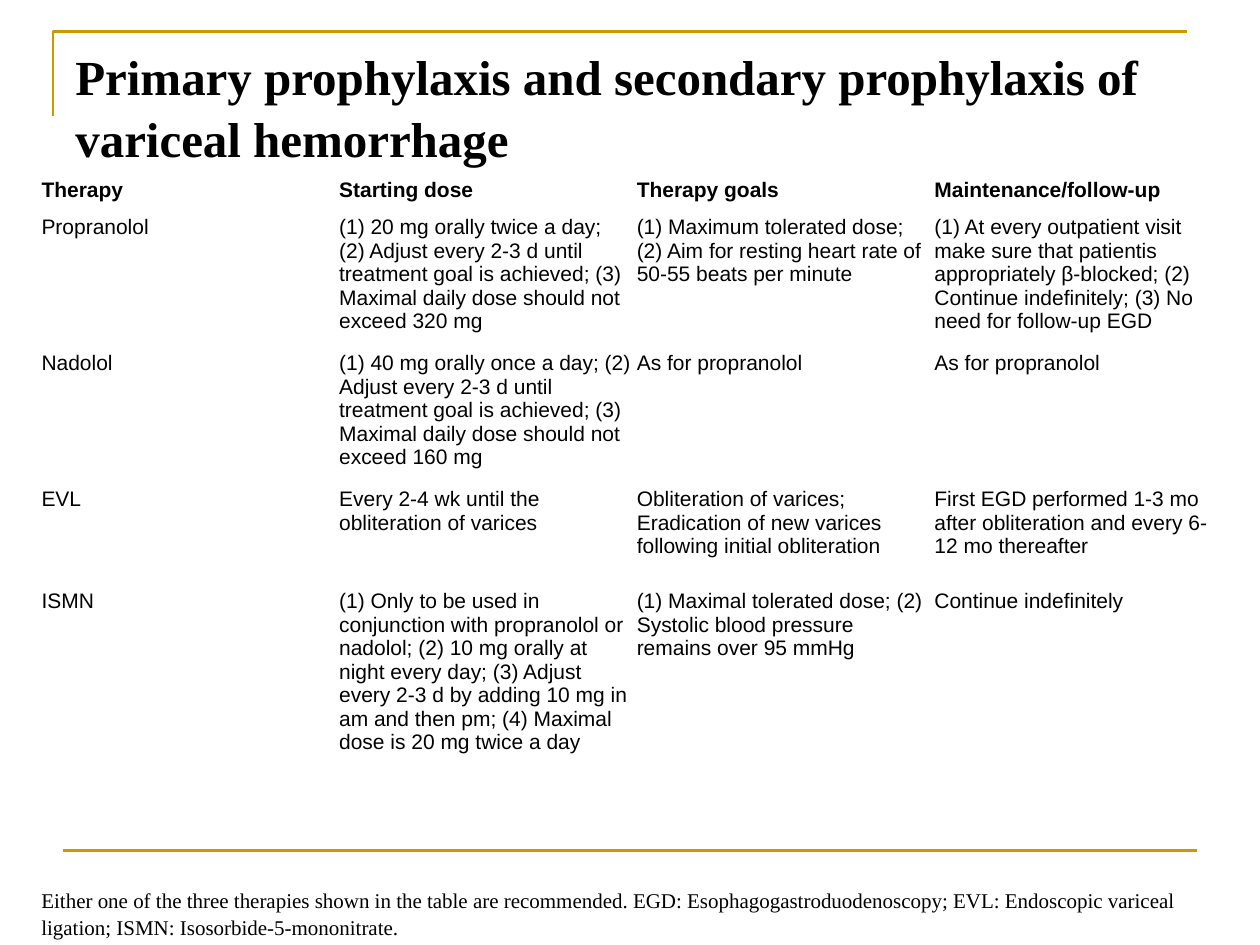
from dataclasses import dataclass

from lxml.etree import SubElement
from pptx import Presentation
from pptx.dml.color import RGBColor
from pptx.enum.shapes import MSO_CONNECTOR, MSO_SHAPE
from pptx.enum.text import MSO_ANCHOR, PP_ALIGN
from pptx.oxml.ns import qn
from pptx.util import Inches, Pt


@dataclass(frozen=True)
class Theme:
    ink: RGBColor = RGBColor(0, 0, 0)
    paper: RGBColor = RGBColor(255, 255, 255)
    rule: RGBColor = RGBColor(0xCC, 0x99, 0x00)
    rule_width: float = 1.5
    serif: str = "Times New Roman"
    sans: str = "Arial"
    title_size: int = 28
    body_size: int = 12


THEME = Theme()
SLIDE_WIDTH, SLIDE_HEIGHT = Inches(10), Inches(7.5)
TITLE = "Primary prophylaxis and secondary prophylaxis of variceal hemorrhage"
FOOTNOTE = (
    "Either one of the three therapies shown in the table are recommended. "
    "EGD: Esophagogastroduodenoscopy; EVL: Endoscopic variceal ligation; "
    "ISMN: Isosorbide-5-mononitrate."
)
ROW_HEIGHTS = [0.29, 1.08, 1.08, 0.81, 1.59]
THERAPIES = [
    ["Therapy", "Starting dose", "Therapy goals", "Maintenance/follow-up"],
    ["Propranolol",
     "(1) 20 mg orally twice a day; (2) Adjust every 2-3 d until treatment goal is "
     "achieved; (3) Maximal daily dose should not exceed 320 mg",
     "(1) Maximum tolerated dose; (2) Aim for resting heart rate of 50-55 beats per minute",
     "(1) At every outpatient visit make sure that patientis appropriately β-blocked; "
     "(2) Continue indefinitely; (3) No need for follow-up EGD"],
    ["Nadolol",
     "(1) 40 mg orally once a day; (2) Adjust every 2-3 d until treatment goal is "
     "achieved; (3) Maximal daily dose should not exceed 160 mg",
     "As for propranolol",
     "As for propranolol"],
    ["EVL",
     "Every 2-4 wk until the obliteration of varices",
     "Obliteration of varices; Eradication of new varices following initial obliteration",
     "First EGD performed 1-3 mo after obliteration and every 6-12 mo thereafter"],
    ["ISMN",
     "(1) Only to be used in conjunction with propranolol or nadolol; (2) 10 mg orally at "
     "night every day; (3) Adjust every 2-3 d by adding 10 mg in am and then pm; "
     "(4) Maximal dose is 20 mg twice a day",
     "(1) Maximal tolerated dose; (2) Systolic blood pressure remains over 95 mmHg",
     "Continue indefinitely"],
]


def box(left, top, width, height):
    return tuple(Inches(length) for length in (left, top, width, height))


def write(frame, text, font, size, bold=False, spacing=None):
    frame.word_wrap = True
    paragraph = frame.paragraphs[0]
    paragraph.alignment = PP_ALIGN.LEFT
    paragraph.line_spacing = spacing
    run = paragraph.add_run()
    run.text = text
    run.font.name, run.font.size, run.font.bold = font, Pt(size), bold
    run.font.color.rgb = THEME.ink


def style_rule(line):
    line.color.rgb = THEME.rule
    line.width = Pt(THEME.rule_width)


def add_corner(slide, area):
    """Open bracket along the left and top edges of the area."""
    left, top, width, height = area
    outline = slide.shapes.build_freeform(left, top + height)
    outline.add_line_segments([(left, top), (left + width, top)], close=False)
    corner = outline.convert_to_shape()
    corner.shadow.inherit = False
    corner.fill.background()
    style_rule(corner.line)


def add_bottom_rule(slide, area):
    left, top, width, _ = area
    rule = slide.shapes.add_connector(MSO_CONNECTOR.STRAIGHT, left, top, left + width, top)
    style_rule(rule.line)
    SubElement(rule._element.spPr, qn("a:effectLst"))


def add_title(slide, area):
    frame = slide.shapes.add_textbox(*area).text_frame
    frame.vertical_anchor = MSO_ANCHOR.TOP
    write(frame, TITLE, THEME.serif, THEME.title_size, bold=True, spacing=1.05)


def add_therapy_table(slide, area):
    rows, columns = len(THERAPIES), len(THERAPIES[0])
    table = slide.shapes.add_table(rows, columns, *area).table
    table.horz_banding = False
    for column in table.columns:
        column.width = area[2] // columns
    for row, height, entries in zip(table.rows, ROW_HEIGHTS, THERAPIES):
        row.height = int(area[3] * height / sum(ROW_HEIGHTS))
        for cell, entry in zip(row.cells, entries):
            cell.fill.background()
            cell.margin_left = cell.margin_right = Inches(0.02)
            cell.margin_top = cell.margin_bottom = Inches(0.01)
            cell.vertical_anchor = MSO_ANCHOR.TOP
            write(cell.text_frame, entry, THEME.sans, THEME.body_size,
                  bold=entries is THERAPIES[0])
            for edge in ("lnL", "lnR", "lnT", "lnB"):
                border = cell._tc.tcPr.makeelement(qn(f"a:{edge}"), {"w": "0"})
                SubElement(border, qn("a:noFill"))
                cell._tc.tcPr.insert(len(cell._tc.tcPr) - 1, border)


def add_footnote(slide, area):
    footnote = slide.shapes.add_shape(MSO_SHAPE.RECTANGLE, *area)
    footnote.shadow.inherit = False
    footnote.fill.solid()
    footnote.fill.fore_color.rgb = THEME.paper
    footnote.line.fill.background()
    footnote.text_frame.vertical_anchor = MSO_ANCHOR.MIDDLE
    write(footnote.text_frame, FOOTNOTE, THEME.serif, THEME.body_size, spacing=1.08)


def main():
    deck = Presentation()
    deck.slide_width, deck.slide_height = SLIDE_WIDTH, SLIDE_HEIGHT
    slide = deck.slides.add_slide(deck.slide_layouts[6])
    slide.background.fill.solid()
    slide.background.fill.fore_color.rgb = THEME.paper
    add_corner(slide, box(0.42, 0.25, 9, 0.67))
    add_bottom_rule(slide, box(0.5, 6.75, 9, 0))
    add_title(slide, box(0.5, 0.3, 9, 0.95))
    add_therapy_table(slide, box(0.31, 1.41, 9.45, sum(ROW_HEIGHTS)))
    add_footnote(slide, box(0.23, 6.99, 9.61, 0.51))
    deck.save("out.pptx")


if __name__ == "__main__":
    main()
